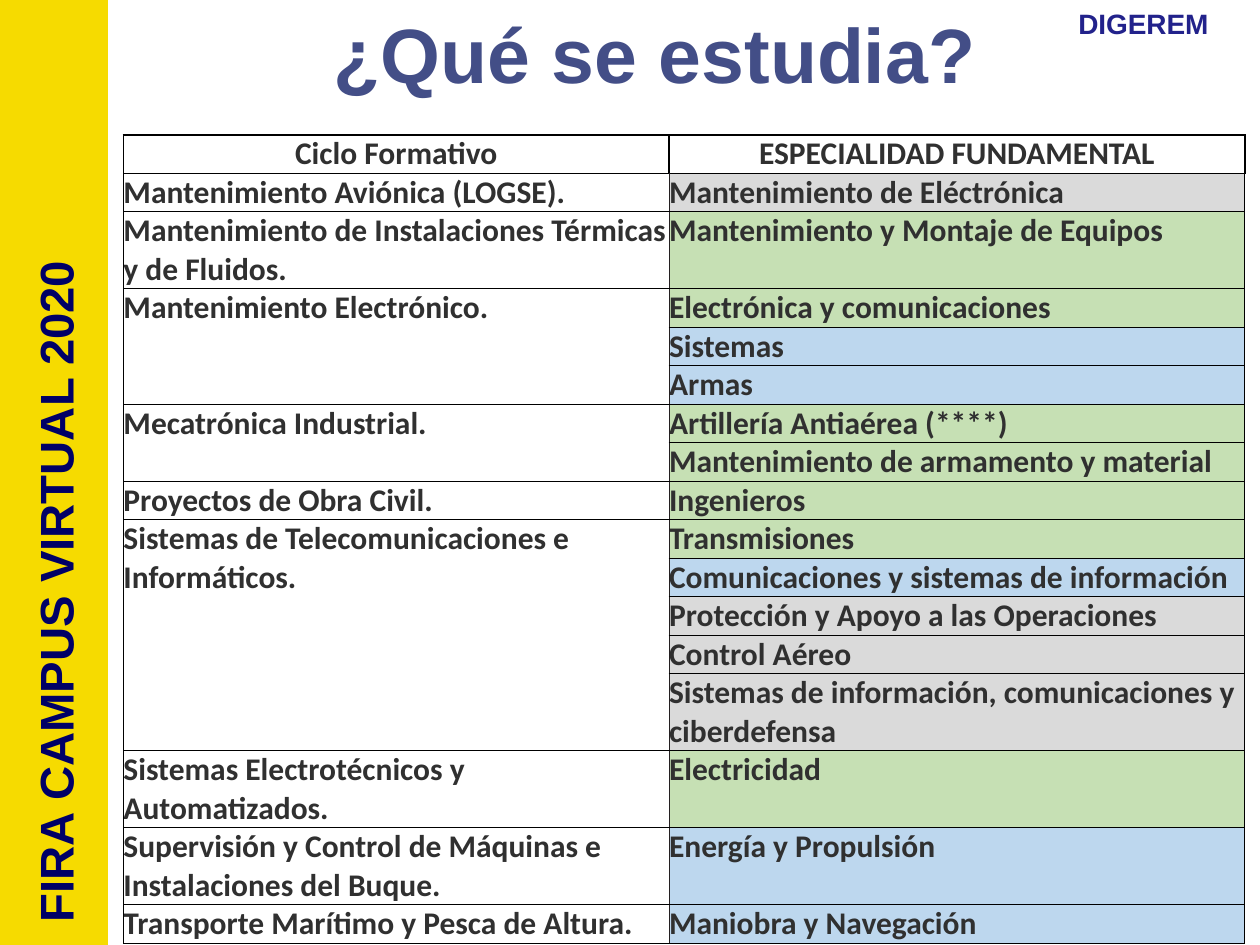
from typing import NamedTuple

from lxml import etree
from pptx import Presentation
from pptx.dml.color import RGBColor
from pptx.enum.shapes import MSO_SHAPE
from pptx.enum.text import MSO_ANCHOR, PP_ALIGN
from pptx.oxml.ns import qn
from pptx.util import Pt

RECTANGLE = MSO_SHAPE.RECTANGLE
BOTTOM = MSO_ANCHOR.BOTTOM
CENTER, LEFT = PP_ALIGN.CENTER, PP_ALIGN.LEFT

YELLOW = RGBColor(0xF6, 0xDB, 0x00)
SLATE_BLUE = RGBColor(0x43, 0x4E, 0x87)
INDIGO = RGBColor(0x22, 0x22, 0x8B)
NAVY = RGBColor(0x00, 0x00, 0x66)
TEXT_GRAY = RGBColor(0x30, 0x30, 0x30)
BLACK = RGBColor(0x00, 0x00, 0x00)
CHARCOAL = RGBColor(0x23, 0x1F, 0x20)
GREEN = RGBColor(0xC6, 0xE0, 0xB4)
BLUE = RGBColor(0xBD, 0xD7, 0xEE)
GRAY = RGBColor(0xDA, 0xDA, 0xDA)

LINE_HEIGHT = 22
COLUMN_WIDTHS = (311.76, 329.04)
TABLE_LEFT, TABLE_TOP = 70.56, 77.04
HEADERS = ("Ciclo Formativo", "ESPECIALIDAD FUNDAMENTAL")


class Label(NamedTuple):
    text: str
    left: float
    top: float
    width: float
    height: float
    size: float
    color: RGBColor
    rotation: float = 0


class Specialty(NamedTuple):
    name: str
    color: RGBColor
    lines: int = 1


class Cycle(NamedTuple):
    name: str
    specialties: tuple[Specialty, ...]


class Edge(NamedTuple):
    color: RGBColor = BLACK
    width: float = 0.5


LABELS = (
    Label("¿Qué se estudia?", 150.5, 0, 447.8, 59.8, 44, SLATE_BLUE),
    Label("DIGEREM", 586.8, 0, 133.2, 26.6, 16, INDIGO),
    Label("FIRA CAMPUS VIRTUAL 2020", -173.5, 317.5, 408.2, 41, 27, NAVY, 270),
)

CYCLES = (
    Cycle("Mantenimiento Aviónica (LOGSE).", (
        Specialty("Mantenimiento de Eléctrónica", GRAY),
    )),
    Cycle("Mantenimiento de Instalaciones Térmicas y de Fluidos.", (
        Specialty("Mantenimiento y Montaje de Equipos", GREEN, 2),
    )),
    Cycle("Mantenimiento Electrónico.", (
        Specialty("Electrónica y comunicaciones", GREEN),
        Specialty("Sistemas", BLUE),
        Specialty("Armas", BLUE),
    )),
    Cycle("Mecatrónica Industrial.", (
        Specialty("Artillería Antiaérea (****)", GREEN),
        Specialty("Mantenimiento de armamento y material", GREEN),
    )),
    Cycle("Proyectos de Obra Civil.", (
        Specialty("Ingenieros", GREEN),
    )),
    Cycle("Sistemas de Telecomunicaciones e Informáticos.", (
        Specialty("Transmisiones", GREEN),
        Specialty("Comunicaciones y sistemas de información", BLUE),
        Specialty("Protección y Apoyo a las Operaciones", GRAY),
        Specialty("Control Aéreo", GRAY),
        Specialty("Sistemas de información, comunicaciones y ciberdefensa", GRAY, 2),
    )),
    Cycle("Sistemas Electrotécnicos y Automatizados.", (
        Specialty("Electricidad", GREEN, 2),
    )),
    Cycle("Supervisión y Control de Máquinas e Instalaciones del Buque.", (
        Specialty("Energía y Propulsión", BLUE, 2),
    )),
    Cycle("Transporte Marítimo y Pesca de Altura.", (
        Specialty("Maniobra y Navegación", BLUE),
    )),
)


def style_paragraph(paragraph, font_name: str, size: float, color: RGBColor, alignment) -> None:
    paragraph.alignment = alignment
    font = paragraph.font
    font.name, font.size, font.bold = font_name, Pt(size), True
    font.color.rgb = color


def add_label(slide, label: Label) -> None:
    shape = slide.shapes.add_textbox(
        Pt(label.left), Pt(label.top), Pt(label.width), Pt(label.height))
    shape.rotation = label.rotation
    frame = shape.text_frame
    frame.word_wrap = True
    frame.vertical_anchor = BOTTOM
    frame.text = label.text
    style_paragraph(frame.paragraphs[0], "Arial", label.size, label.color, CENTER)


def set_borders(cell, row: int, column: int) -> None:
    outer = Edge(width=1) if row == 0 else Edge()
    inner = outer if row == 0 else Edge(CHARCOAL)
    top = Edge(width=1) if row <= 1 else Edge()
    edges = {
        "a:lnL": outer if column == 0 else inner,
        "a:lnR": inner if column == 0 else outer,
        "a:lnT": top,
        "a:lnB": outer,
    }
    properties = cell._tc.get_or_add_tcPr()
    for tag, edge in edges.items():
        line = etree.SubElement(properties, qn(tag), w=str(Pt(edge.width)))
        fill = etree.SubElement(line, qn("a:solidFill"))
        etree.SubElement(fill, qn("a:srgbClr"), val=str(edge.color))


def fill_cell(cell, text: str, color: RGBColor | None, alignment) -> None:
    cell.margin_left = cell.margin_right = cell.margin_top = cell.margin_bottom = 0
    if color is None:
        cell.fill.background()
    else:
        cell.fill.solid()
        cell.fill.fore_color.rgb = color
    cell.text = text
    style_paragraph(cell.text_frame.paragraphs[0], "Calibri", 18, TEXT_GRAY, alignment)


def add_cycle_table(slide, cycles: tuple[Cycle, ...]) -> None:
    line_counts = [1] + [item.lines for cycle in cycles for item in cycle.specialties]
    table = slide.shapes.add_table(
        len(line_counts), len(COLUMN_WIDTHS), Pt(TABLE_LEFT), Pt(TABLE_TOP),
        Pt(sum(COLUMN_WIDTHS)), Pt(sum(line_counts) * LINE_HEIGHT)).table
    table.first_row = table.horz_banding = False
    for column, width in zip(table.columns, COLUMN_WIDTHS):
        column.width = Pt(width)
    for row, lines in enumerate(line_counts):
        table.rows[row].height = Pt(lines * LINE_HEIGHT)
        for column in range(len(COLUMN_WIDTHS)):
            set_borders(table.cell(row, column), row, column)

    # Header row
    for column, header in enumerate(HEADERS):
        fill_cell(table.cell(0, column), header, None, CENTER)

    # One merged cycle cell beside its specialties
    row = 1
    for cycle in cycles:
        for offset, specialty in enumerate(cycle.specialties):
            name = cycle.name if offset == 0 else ""
            fill_cell(table.cell(row + offset, 0), name, None, LEFT)
            fill_cell(table.cell(row + offset, 1), specialty.name, specialty.color, LEFT)
        last_row = row + len(cycle.specialties) - 1
        if last_row > row:
            table.cell(row, 0).merge(table.cell(last_row, 0))
        row = last_row + 1


def main() -> None:
    presentation = Presentation()
    presentation.slide_width, presentation.slide_height = Pt(720), Pt(540)
    slide = presentation.slides.add_slide(presentation.slide_layouts[6])

    # Side band
    band = slide.shapes.add_shape(RECTANGLE, 0, 0, Pt(61.2), Pt(540))
    band.shadow.inherit = False
    band.fill.solid()
    band.fill.fore_color.rgb = YELLOW
    band.line.color.rgb = YELLOW
    band.line.width = Pt(0.75)

    # Table and labels
    add_cycle_table(slide, CYCLES)
    for label in LABELS:
        add_label(slide, label)

    presentation.save("out.pptx")


if __name__ == "__main__":
    main()
